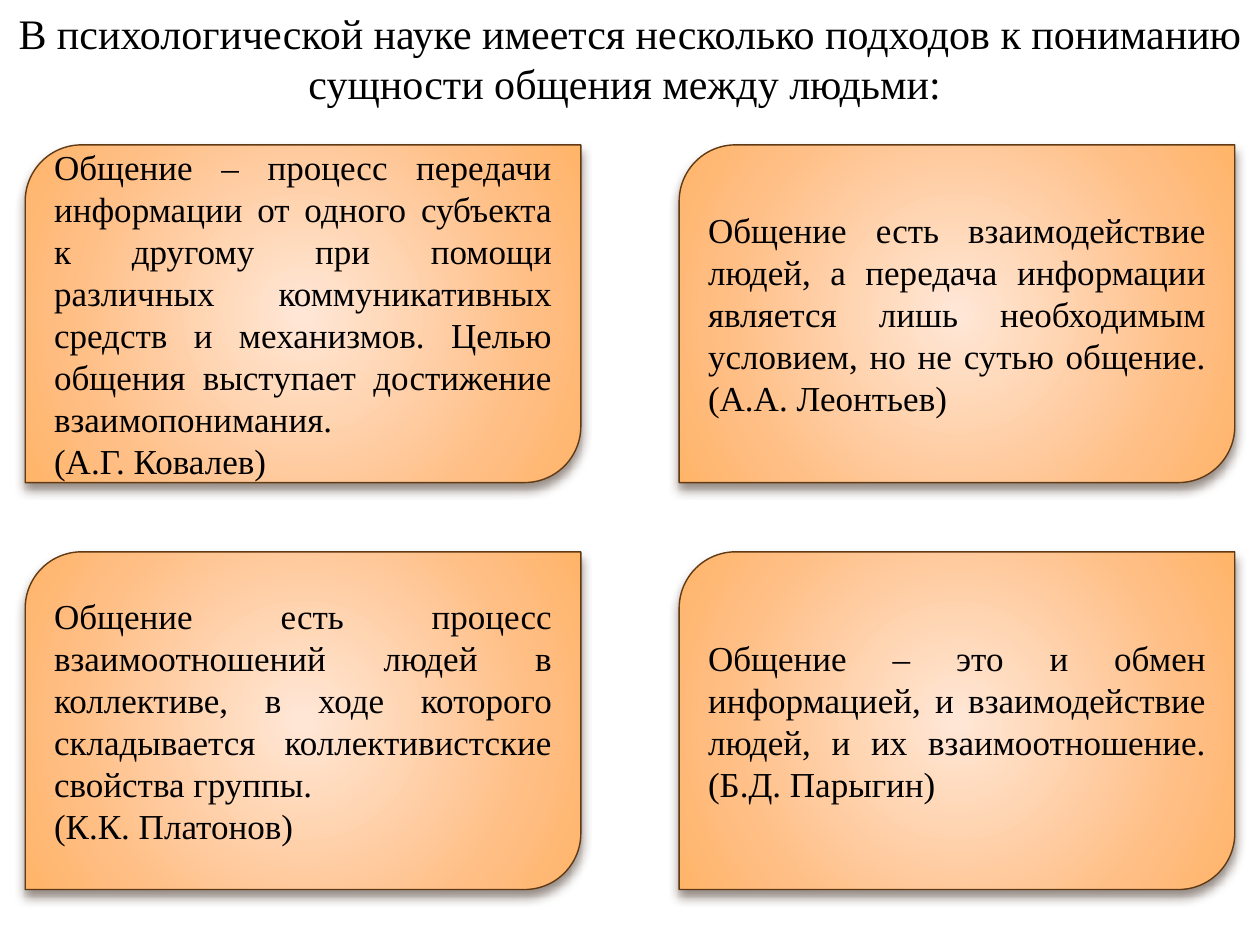
import dataclasses
import itertools

import pptx
import pptx.dml.color
import pptx.enum.shapes
import pptx.enum.text
import pptx.oxml
import pptx.oxml.ns
import pptx.util
from pptx.util import Inches


@dataclasses.dataclass(frozen=True)
class Theme:
    """Colours and type sizes of the slide."""
    font: str = "Times New Roman"
    text: str = "000000"
    outline: str = "603A14"
    shadow: str = "4E3B30"
    gradient: tuple = ((0, "FFE7D7"), (72, "FFBE84"), (100, "FFB468"))
    title_size: int = 24
    card_size: int = 20
    outline_width: float = 0.79


THEME = Theme()
TITLE = "В психологической науке имеется несколько подходов к пониманию сущности общения между людьми: "
CARDS = (
    ("Общение – процесс передачи информации от одного субъекта к другому при помощи различных "
     "коммуникативных средств и механизмов. Целью общения выступает достижение взаимопонимания. ",
     "(А.Г. Ковалев)"),
    ("Общение есть взаимодействие людей, а передача информации является лишь необходимым условием, "
     "но не сутью общение. (А.А. Леонтьев)",),
    ("Общение есть процесс взаимоотношений людей в коллективе, в ходе которого складывается "
     "коллективистские свойства группы. ",
     "(К.К. Платонов)"),
    ("Общение – это и обмен информацией, и взаимодействие людей, и их взаимоотношение. (Б.Д. Парыгин)",),
)


def set_attributes(target, values):
    """Set every attribute of the target from a dict."""
    for name, value in values.items():
        setattr(target, name, value)


def write_text(shape, lines, size, alignment, anchor):
    """Fill a shape with one formatted paragraph per line."""
    frame = shape.text_frame
    frame.text = "\n".join(lines)
    set_attributes(frame, {
        "word_wrap": True,
        "auto_size": pptx.enum.text.MSO_AUTO_SIZE.NONE,
        "vertical_anchor": anchor,
    })
    for paragraph in frame.paragraphs:
        set_attributes(paragraph, {"alignment": alignment, "line_spacing": 1.0, "space_before": pptx.util.Pt(0)})
        for run in paragraph.runs:
            set_attributes(run.font, {"name": THEME.font, "size": pptx.util.Pt(size)})
            run.font.color.rgb = pptx.dml.color.RGBColor.from_string(THEME.text)


def add_radial_fill(shape):
    """Give a shape the theme gradient spreading from its centre."""
    stops = "".join(
        f'<a:gs pos="{position * 1000}"><a:srgbClr val="{color}"/></a:gs>'
        for position, color in THEME.gradient)
    gradient = pptx.oxml.parse_xml(
        f'<a:gradFill {pptx.oxml.ns.nsdecls("a")} rotWithShape="1"><a:gsLst>{stops}</a:gsLst>'
        '<a:path path="circle"><a:fillToRect l="50000" t="50000" r="50000" b="50000"/></a:path>'
        '</a:gradFill>')
    shape._element.spPr.find(pptx.oxml.ns.qn("a:prstGeom")).addnext(gradient)


def add_shadow(shape):
    """Replace the inherited shadow by a soft one falling downwards."""
    shape.shadow.inherit = False
    effects = shape._element.spPr.find(pptx.oxml.ns.qn("a:effectLst"))
    effects.append(pptx.oxml.parse_xml(
        f'<a:outerShdw {pptx.oxml.ns.nsdecls("a")} blurRad="{pptx.util.Pt(6)}" dist="{pptx.util.Pt(4)}" '
        f'dir="5400000" rotWithShape="0"><a:srgbClr val="{THEME.shadow}"><a:alpha val="60000"/></a:srgbClr>'
        '</a:outerShdw>'))


def place_title(slide, left, top, width, height):
    """Move and format the title placeholder."""
    title = slide.shapes.title
    set_attributes(title, {"left": left, "top": top, "width": width, "height": height})
    write_text(title, [TITLE], THEME.title_size,
               pptx.enum.text.PP_ALIGN.CENTER, pptx.enum.text.MSO_ANCHOR.TOP)


def add_card(slide, lines, left, top, width, height):
    """Add one card with a definition and its author."""
    card = slide.shapes.add_shape(
        pptx.enum.shapes.MSO_SHAPE.ROUND_2_DIAG_RECTANGLE, left, top, width, height)
    add_radial_fill(card)
    card.line.width = pptx.util.Pt(THEME.outline_width)
    card.line.color.rgb = pptx.dml.color.RGBColor.from_string(THEME.outline)
    add_shadow(card)
    write_text(card, lines, THEME.card_size,
               pptx.enum.text.PP_ALIGN.JUSTIFY, pptx.enum.text.MSO_ANCHOR.MIDDLE)


def add_card_grid(slide, left, top, width, height):
    """Spread the cards over two rows and two columns of the box."""
    card_width, card_height = Inches(4.41), Inches(2.68)
    lefts = (left, left + width - card_width)
    tops = (top, top + height - card_height)
    for lines, (card_top, card_left) in zip(CARDS, itertools.product(tops, lefts)):
        add_card(slide, lines, card_left, card_top, card_width, card_height)


def main():
    """Build and save the presentation."""
    presentation = pptx.Presentation()
    set_attributes(presentation, {"slide_width": Inches(10), "slide_height": Inches(7.5)})
    slide = presentation.slides.add_slide(presentation.slide_layouts.get_by_name("Title Only"))
    place_title(slide, Inches(0), Inches(0.01), Inches(10), Inches(0.91))
    add_card_grid(slide, Inches(0.2), Inches(1.15), Inches(9.6), Inches(5.91))
    presentation.save("out.pptx")


if __name__ == "__main__":
    main()
